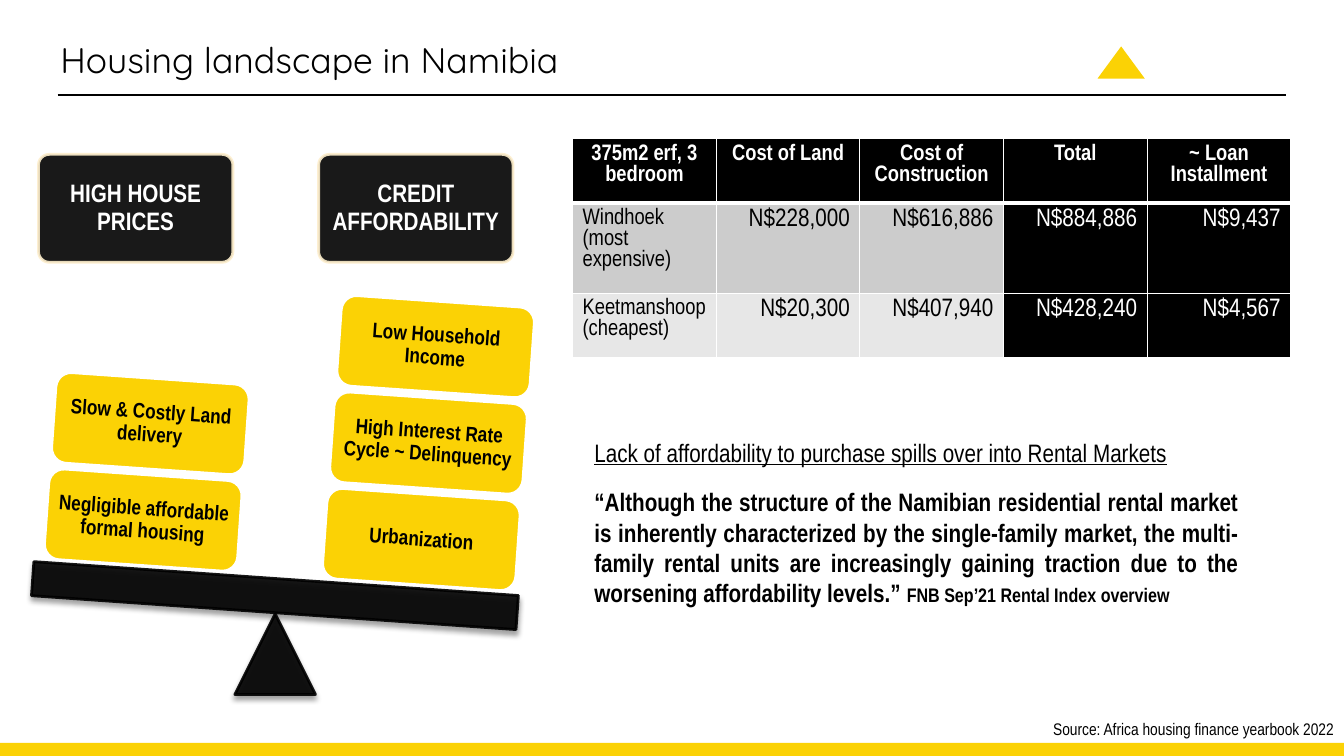
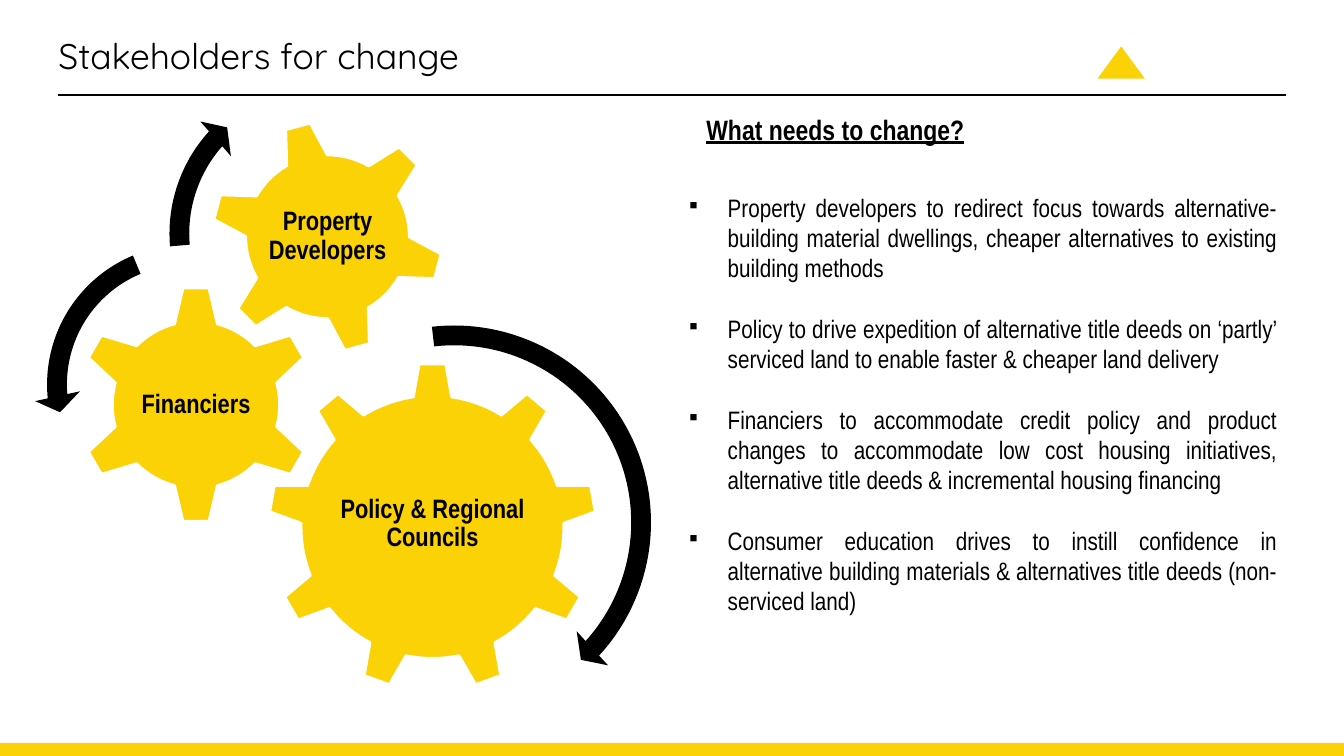
"""Build two slides on housing in Namibia and its stakeholders."""
from lxml.etree import SubElement
from pptx import Presentation
from pptx.dml.color import RGBColor
from pptx.enum.shapes import MSO_CONNECTOR, MSO_SHAPE
from pptx.enum.text import MSO_ANCHOR, PP_ALIGN
from pptx.oxml.ns import qn
from pptx.util import Cm, Pt

BLACK = RGBColor(0, 0, 0)
WHITE = RGBColor(255, 255, 255)
GOLD = RGBColor(0xFB, 0xD2, 0x05)
CREAM = RGBColor(0xFD, 0xEE, 0xCC)
GREYS = [BLACK, RGBColor(0xCC, 0xCC, 0xCC), RGBColor(0xE7, 0xE7, 0xE7)]
BODY = "Arial Narrow"
HEAD = "Quicksand"
WIDE, HIGH = 33.87, 19.05
TILT = 4

STACKS = [
    ("HIGH HOUSE PRICES", 0.97, (1.17, 11.96),
     ["Negligible affordable formal housing", "Slow & Costly Land delivery"]),
    ("CREDIT AFFORDABILITY", 8.03, (8.18, 12.45),
     ["Urbanization", "High Interest Rate Cycle ~ Delinquency", "Low Household Income"]),
]
STEP = (0.18, 2.43)

COSTS = [
    ["375m2 erf, 3 bedroom", "Cost of Land", "Cost of Construction", "Total", "~ Loan Installment"],
    ["Windhoek\n(most expensive)", "N$228,000", "N$616,886", "N$884,886", "N$9,437"],
    ["Keetmanshoop\n(cheapest)", "N$20,300", "N$407,940", "N$428,240", "N$4,567"],
]
ROWS = [1.3, 1.83, 1.3]

SPILL = "Lack of affordability to purchase spills over into Rental Markets"
QUOTE = (
    "“Although the structure of the Namibian residential rental market is inherently "
    "characterized by the single-family market, the multi-family rental units are "
    "increasingly gaining traction due to the worsening affordability levels.” "
)
CREDIT = "FNB Sep’21 Rental Index overview"
SOURCE = "Source: Africa housing finance yearbook 2022"

GEARS = [
    ("Policy & Regional Councils", MSO_SHAPE.GEAR_9, 6.76, 9.14, 8.28, 0, 0.08),
    ("Financiers", MSO_SHAPE.GEAR_6, 1.93, 7.19, 6.02, 0, 0),
    ("Property Developers", MSO_SHAPE.GEAR_6, 5.31, 3.02, 5.89, 345, 0),
]
ARROWS = [
    (MSO_SHAPE.CIRCULAR_ARROW, 6.15, 7.87, 10.59, (4.7, 299, 2539.3, 15812.3, 5.5)),
    (MSO_SHAPE.LEFT_CIRCULAR_ARROW, 0.86, 5.84, 7.7, (6.5, 430, 10489.1, 14837.8, 7.5)),
    (MSO_SHAPE.CIRCULAR_ARROW, 3.94, 1.73, 8.31, (6, 394.1, 13313.8, 10508.2, 7)),
]
CHANGES = [
    "Property developers to redirect focus towards alternative-building material dwellings, "
    "cheaper alternatives to existing building methods",
    "Policy to drive expedition of alternative title deeds on ‘partly’ serviced land to enable "
    "faster & cheaper land delivery",
    "Financiers to accommodate credit policy and product changes to accommodate low cost housing "
    "initiatives, alternative title deeds & incremental housing financing",
    "Consumer education drives to instill confidence in alternative building materials & "
    "alternatives title deeds (non-serviced land)",
]


def place(*box):
    return [Cm(n) for n in box]


def style(run, size, color=BLACK, bold=False, line=False, name=BODY):
    font = run.font
    font.size, font.name, font.bold, font.underline = Pt(size), name, bold, line
    font.color.rgb = color


def write(frame, text, size, align=PP_ALIGN.LEFT, lead=None, **look):
    frame.text = text
    for para in frame.paragraphs:
        para.alignment = align
        if lead:
            para.line_spacing = lead
        for run in para.runs:
            style(run, size, **look)


def inset(frame, gap):
    frame.margin_left = frame.margin_right = Cm(gap)
    frame.margin_top = frame.margin_bottom = Cm(gap)


def label(slide, box, text, size, gap=None, anchor=MSO_ANCHOR.TOP, **look):
    frame = slide.shapes.add_textbox(*place(*box)).text_frame
    frame.word_wrap = True
    frame.vertical_anchor = anchor
    if gap is not None:
        inset(frame, gap)
    write(frame, text, size, **look)
    return frame


def draw(slide, kind, box, fill, edge=None, turn=0):
    shape = slide.shapes.add_shape(kind, *place(*box))
    shape.shadow.inherit = False
    shape.rotation = turn
    shape.fill.solid()
    shape.fill.fore_color.rgb = fill
    if edge is None:
        shape.line.fill.background()
    else:
        shape.line.color.rgb = edge
        shape.line.width = Pt(2)
    return shape


def fade(shape):
    for tint in shape.element.spPr.iter(qn("a:srgbClr")):
        SubElement(tint, qn("a:alpha"), val="90000")


def shade(shape):
    root = shape.element.spPr.find(qn("a:effectLst"))
    cast = SubElement(root, qn("a:outerShdw"), blurRad=str(Pt(4)), dist=str(Pt(3)),
                      dir="5400000", rotWithShape="0")
    tint = SubElement(cast, qn("a:srgbClr"), val=str(BLACK))
    SubElement(tint, qn("a:alpha"), val="40000")


def fill_in(shape, text, size, gap, color=BLACK):
    frame = shape.text_frame
    frame.word_wrap = True
    frame.vertical_anchor = MSO_ANCHOR.MIDDLE
    inset(frame, gap)
    write(frame, text, size, PP_ALIGN.CENTER, 0.9, color=color, bold=True)


def start(deck, title, left, top):
    slide = deck.slides.add_slide(deck.slide_layouts[6])
    rule = slide.shapes.add_connector(MSO_CONNECTOR.STRAIGHT, *place(1.45, 2.39, 32.41, 2.39))
    rule.line.color.rgb = BLACK
    rule.line.width = Pt(1.42)
    SubElement(rule.element.spPr, qn("a:effectLst"))
    draw(slide, MSO_SHAPE.RECTANGLE, (0, 18.72, WIDE, HIGH - 18.72), GOLD)
    draw(slide, MSO_SHAPE.ISOSCELES_TRIANGLE, (27.66, 1.17, 1.19, 0.81), GOLD)
    label(slide, (left, top, 30.99, 1.09), title, 25.4, 0, MSO_ANCHOR.BOTTOM, name=HEAD)
    return slide


def scale(slide):
    for head, left, base, tiles in STACKS:
        card = draw(slide, MSO_SHAPE.ROUNDED_RECTANGLE, (left, 3.89, 4.9, 2.72), BLACK, CREAM)
        card.adjustments[0] = 0.1
        fade(card)
        fill_in(card, head, 18, 0.15, WHITE)
        for i, text in enumerate(tiles):
            box = (base[0] + i * STEP[0], base[1] - i * STEP[1], 4.88, 2.29)
            tile = draw(slide, MSO_SHAPE.ROUNDED_RECTANGLE, box, GOLD, WHITE, TILT)
            fill_in(tile, text, 15, 0.1)
    for kind, box, turn in [
        (MSO_SHAPE.ISOSCELES_TRIANGLE, (5.92, 15.47, 2.03, 2.03), 0),
        (MSO_SHAPE.RECTANGLE, (0.81, 14.58, 12.24, 0.86), TILT),
    ]:
        part = draw(slide, kind, box, BLACK, BLACK, turn)
        fade(part)
        shade(part)


def border(cell, head):
    props = cell._tc.get_or_add_tcPr()
    for side in "LRTB":
        wide = Pt(3) if head and side == "B" else Pt(1)
        edge = SubElement(props, qn("a:ln" + side), w=str(wide))
        SubElement(SubElement(edge, qn("a:solidFill")), qn("a:srgbClr"), val=str(WHITE))


def costs(slide):
    box = place(14.43, 3.5, 18.1, sum(ROWS))
    table = slide.shapes.add_table(len(COSTS), len(COSTS[0]), *box).table
    table.horz_banding = False
    for col in table.columns:
        col.width = Cm(3.62)
    for r, row in enumerate(COSTS):
        table.rows[r].height = Cm(ROWS[r])
        for c, text in enumerate(row):
            cell = table.cell(r, c)
            dark = r == 0 or c > 2
            border(cell, r == 0)
            cell.fill.solid()
            cell.fill.fore_color.rgb = BLACK if dark else GREYS[r]
            align = PP_ALIGN.CENTER if r == 0 else PP_ALIGN.RIGHT if c else PP_ALIGN.LEFT
            write(cell.text_frame, text, 18 if r and c else 16, align,
                  color=WHITE if dark else BLACK, bold=r == 0)


def market(deck):
    slide = start(deck, "Housing landscape in Namibia", 1.52, 0.95)
    scale(slide)
    costs(slide)
    label(slide, (14.73, 10.9, 18.08, 1.02), SPILL, 18, line=True)
    frame = label(slide, (14.73, 12.14, 16.74, 3.33), QUOTE, 18,
                  align=PP_ALIGN.JUSTIFY, bold=True)
    run = frame.paragraphs[0].add_run()
    run.text = CREDIT
    style(run, 14, bold=True)
    label(slide, (26.54, 18.11, 7.33, 0.51), SOURCE, 12, 0)


def players(deck):
    slide = start(deck, "Stakeholders for change", 1.47, 0.84)
    for text, kind, left, top, size, turn, lift in GEARS:
        draw(slide, kind, (left, top, size, size), GOLD, WHITE, turn)
        side = 0.6 * size
        gap = (size - side) / 2
        label(slide, (left + gap, top + gap - lift, side, side), text, 19, 0.08,
              MSO_ANCHOR.MIDDLE, align=PP_ALIGN.CENTER, lead=0.9, bold=True)
    for kind, left, top, size, bends in ARROWS:
        arrow = draw(slide, kind, (left, top, size, size), BLACK)
        for i, bend in enumerate(bends):
            arrow.adjustments[i] = bend / 100
    label(slide, (17.55, 2.72, 15.09, 1.12), "What needs to change?", 20, bold=True, line=True)
    frame = label(slide, (17.12, 4.72, 15.32, 11.79), "\n".join(CHANGES), 18,
                  align=PP_ALIGN.JUSTIFY)
    for i, para in enumerate(frame.paragraphs):
        props = para._p.get_or_add_pPr()
        props.set("marL", str(Cm(0.97)))
        props.set("indent", str(-Cm(0.97)))
        SubElement(props, qn("a:buFont"), typeface=BODY)
        SubElement(props, qn("a:buChar"), char="▪")
        if i:
            para.space_before = Pt(21.6)


def main():
    deck = Presentation()
    deck.slide_width, deck.slide_height = place(WIDE, HIGH)
    market(deck)
    players(deck)
    deck.save("out.pptx")


if __name__ == "__main__":
    main()
